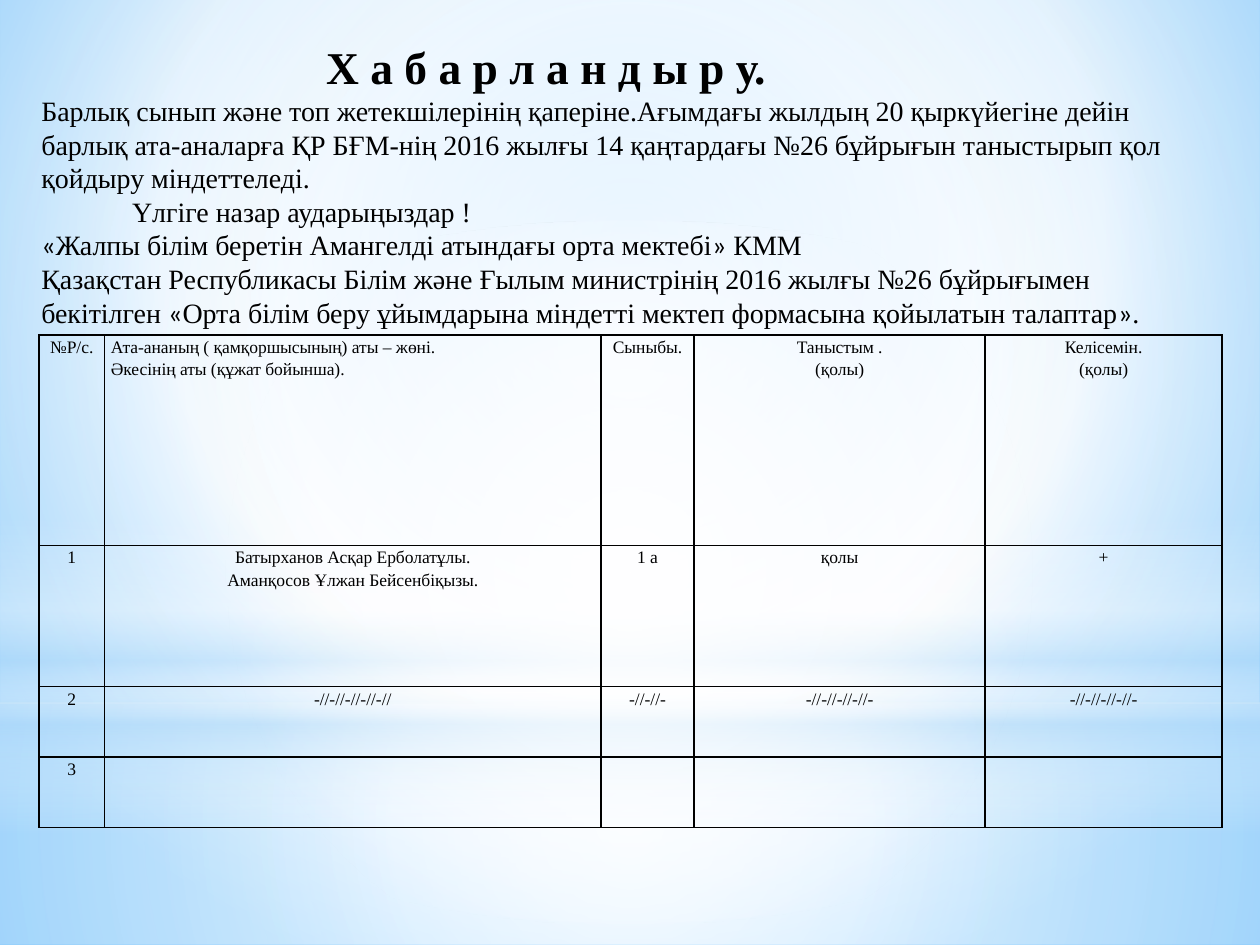
from itertools import groupby

from pptx import Presentation, util as u
from pptx.dml.color import RGBColor
from pptx.enum import shapes, text
from pptx.oxml import parse_xml
from pptx.oxml.ns import nsdecls

BLACK = RGBColor(0x00, 0x00, 0x00)
WHITE = RGBColor(0xFF, 0xFF, 0xFF)
SKY = RGBColor(0x9E, 0xD5, 0xFF)
AZURE = RGBColor(0x5B, 0xB9, 0xFF)
PALE = RGBColor(0xB4, 0xDC, 0xFA)
SERIF = "Times New Roman"
SANS = "Calibri"
CENTRE = (50, 50, 50, 50)

GLOWS = [
    (shapes.MSO_SHAPE.RECTANGLE, (0, 5.58, 10, 1.92),
     [(0, WHITE, 91), (37, WHITE, 76), (100, PALE, 79)], CENTRE),
    (shapes.MSO_SHAPE.RECTANGLE, (0, 0, 10, 5.58),
     [(0, WHITE, 89), (48, WHITE, 62), (100, PALE, 79)], CENTRE),
    (shapes.MSO_SHAPE.RECTANGLE, (0, 4.12, 10, 2.5),
     [(0, WHITE, 0), (29, WHITE, 30), (45, PALE, 40),
      (55, WHITE, 26), (65, PALE, 60), (100, WHITE, 0)], None),
    (shapes.MSO_SHAPE.OVAL, (0, 1.75, 10, 5.58),
     [(0, WHITE, 100), (56, WHITE, 0)], CENTRE),
]

NOTICE = [
    ("Х а б а р л а н д ы р у.", 26, True, 2.26),
    ("Барлық сынып және топ жетекшілерінің қаперіне.Ағымдағы жылдың 20 қыркүйегіне дейін "
     "барлық ата-аналарға ҚР БҒМ-нің 2016 жылғы 14 қаңтардағы №26 бұйрығын таныстырып қол "
     "қойдыру міндеттеледі.", 16, False, 0),
    ("Үлгіге назар аударыңыздар !", 16, False, 0.72),
    ("«Жалпы білім беретін Амангелді атындағы орта мектебі» КММ", 16, False, 0),
    ("Қазақстан Республикасы Білім және Ғылым министрінің 2016 жылғы №26 бұйрығымен "
     "бекітілген «Орта білім беру ұйымдарына міндетті мектеп формасына қойылатын талаптар».",
     16, False, 0),
]

COLUMNS = [0.52, 3.94, 0.74, 2.31, 1.88]
ROWS = [1.67, 1.12, 0.56, 0.56]
CELLS = [
    ["№Р/с.", "Ата-ананың ( қамқоршысының) аты – жөні.\nӘкесінің аты (құжат бойынша).",
     "Сыныбы.", "Таныстым .\n(қолы)", "Келісемін.\n(қолы)"],
    ["1", "Батырханов Асқар Ерболатұлы.\nАманқосов Ұлжан Бейсенбіқызы.", "1 а", "қолы", "+"],
    ["2", "-//-//-//-//-//", "-//-//-", "-//-//-//-//-", "-//-//-//-//-"],
    ["3", "", "", "", ""],
]


def set_gradient(parent, stops, focus):
    """Swap the solid fill in parent for a radial gradient, or a vertical one without focus."""
    marks = "".join(
        f'<a:gs pos="{place * 1000}"><a:srgbClr val="{colour}">'
        f'<a:alpha val="{opacity * 1000}"/></a:srgbClr></a:gs>'
        for place, colour, opacity in stops)
    if focus:
        sides = " ".join(f'{side}="{value * 1000}"' for side, value in zip("ltrb", focus))
        direction = f'<a:path path="circle"><a:fillToRect {sides}/></a:path>'
    else:
        direction = '<a:lin ang="5400000" scaled="0"/>'
    gradient = parse_xml(f'<a:gradFill {nsdecls("a")} rotWithShape="1">'
                         f'<a:gsLst>{marks}</a:gsLst>{direction}</a:gradFill>')
    parent.replace(parent.xpath("./a:solidFill")[0], gradient)


def add_backdrop(page):
    """Paint the sky background and the glows over it."""
    page.background.fill.solid()
    set_gradient(page.element.xpath(".//p:bgPr")[0],
                 [(0, SKY, 100), (60, WHITE, 100), (100, AZURE, 100)], (20, 10, 20, 60))
    for kind, box, stops, focus in GLOWS:
        glow = page.shapes.add_shape(kind, *map(u.Inches, box))
        glow.shadow.inherit = False
        glow.line.fill.background()
        glow.fill.solid()
        set_gradient(glow.element.spPr, stops, focus)


def style_span(span, size, font=SERIF, bold=False):
    """Give a run its black font."""
    span.font.name = font
    span.font.size = u.Pt(size)
    span.font.bold = bold
    span.font.color.rgb = BLACK


def add_notice(page, box):
    """Write the title and the notice, with the quotation marks in the sans font."""
    frame = page.shapes.add_textbox(*map(u.Inches, box)).text_frame
    frame.word_wrap = True
    frame.margin_top = u.Inches(0.08)
    for index, (words, size, bold, indent) in enumerate(NOTICE):
        para = frame.add_paragraph() if index else frame.paragraphs[0]
        para._p.get_or_add_pPr().set("indent", str(u.Inches(indent)))
        for quoted, letters in groupby(words, lambda letter: letter in "«»"):
            span = para.add_run()
            span.text = "".join(letters)
            style_span(span, size, SANS if quoted else SERIF, bold)


def set_borders(cell):
    """Draw a thin black line on each side of a cell."""
    properties = cell._tc.get_or_add_tcPr()
    for index, side in enumerate("LRTB"):
        properties.insert(index, parse_xml(
            f'<a:ln{side} {nsdecls("a")} w="{u.Pt(1)}"><a:solidFill>'
            f'<a:srgbClr val="{BLACK}"/></a:solidFill></a:ln{side}>'))


def fill_cell(cell, words, alignment):
    """Write the words of one cell and set its look."""
    cell.fill.background()
    set_borders(cell)
    cell.margin_left = cell.margin_right = u.Inches(0.05)
    cell.margin_top = cell.margin_bottom = 0
    cell.text_frame.text = words
    for para in cell.text_frame.paragraphs:
        para.alignment = alignment
        para.line_spacing = 1.15
        for span in para.runs:
            style_span(span, 10)


def add_register(page, box):
    """Add the table that parents sign."""
    table = page.shapes.add_table(len(ROWS), len(COLUMNS), *map(u.Inches, box)).table
    table.first_row = table.horz_banding = False
    for column, width in zip(table.columns, COLUMNS):
        column.width = u.Inches(width)
    for row, height in zip(table.rows, ROWS):
        row.height = u.Inches(height)
    for down, line in enumerate(CELLS):
        for across, words in enumerate(line):
            is_name_heading = (down, across) == (0, 1)
            alignment = text.PP_ALIGN.LEFT if is_name_heading else text.PP_ALIGN.CENTER
            fill_cell(table.cell(down, across), words, alignment)


def main():
    """Build the deck and save it."""
    deck = Presentation()
    deck.slide_width, deck.slide_height = u.Inches(10), u.Inches(7.5)
    page = deck.slides.add_slide(deck.slide_layouts[6])
    add_backdrop(page)
    add_register(page, (0.31, 2.66, sum(COLUMNS), sum(ROWS)))
    add_notice(page, (0.23, 0.23, 9.53, 2.73))
    deck.save("out.pptx")


if __name__ == "__main__":
    main()
